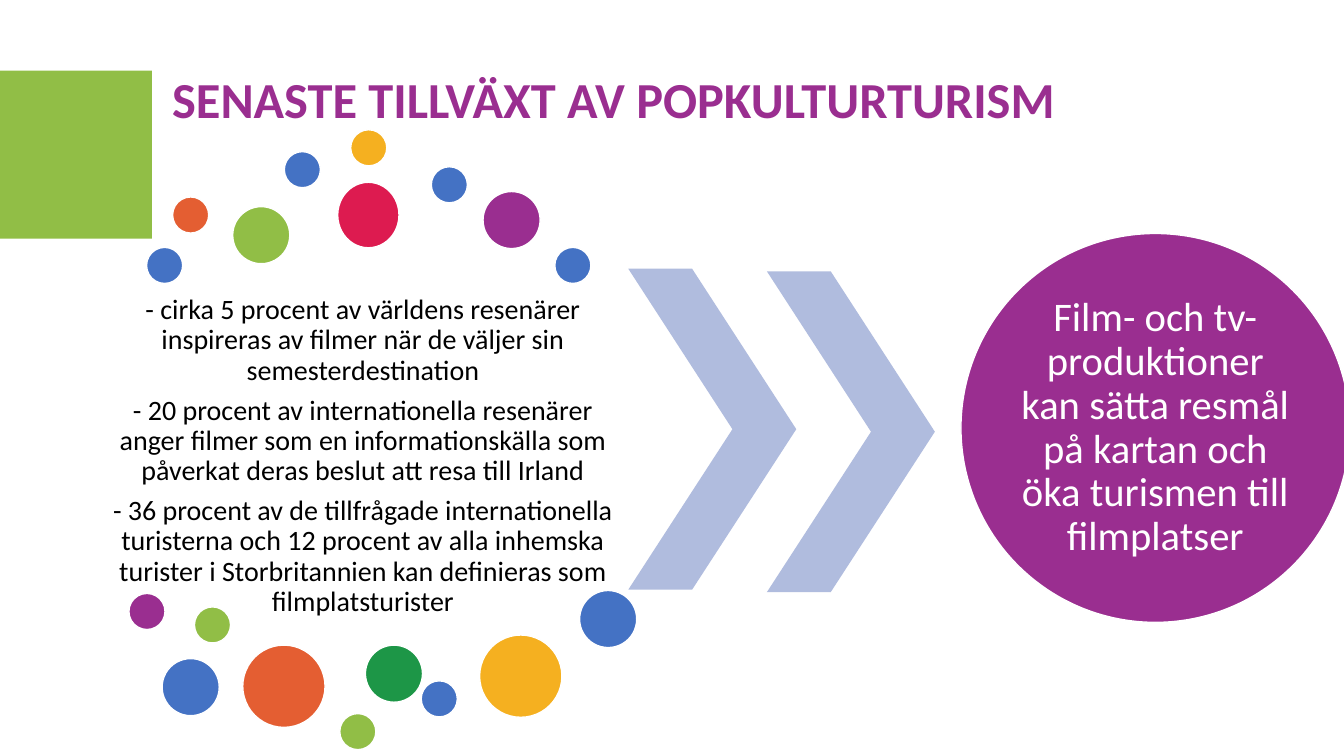
from typing import NamedTuple

from pptx import Presentation
from pptx.dml.color import RGBColor
from pptx.enum.shapes import MSO_SHAPE
from pptx.enum.text import MSO_ANCHOR, MSO_AUTO_SIZE, PP_ALIGN
from pptx.util import Inches, Pt

RECT, OVAL, CHEVRON = MSO_SHAPE.RECTANGLE, MSO_SHAPE.OVAL, MSO_SHAPE.CHEVRON
TOP, MIDDLE = MSO_ANCHOR.TOP, MSO_ANCHOR.MIDDLE
LEFT, CENTER = PP_ALIGN.LEFT, PP_ALIGN.CENTER
FIXED = MSO_AUTO_SIZE.NONE

BLACK = RGBColor(0x00, 0x00, 0x00)
WHITE = RGBColor(0xFF, 0xFF, 0xFF)
LIME = RGBColor(0x91, 0xBE, 0x46)
GREEN = RGBColor(0x1D, 0x96, 0x47)
BLUE = RGBColor(0x44, 0x72, 0xC4)
PALE = RGBColor(0xB0, 0xBC, 0xDE)
ORANGE = RGBColor(0xE4, 0x5E, 0x32)
YELLOW = RGBColor(0xF5, 0xB0, 0x20)
RED = RGBColor(0xDD, 0x1B, 0x50)
PURPLE = RGBColor(0x9A, 0x2E, 0x90)

FONT = "Calibri"
COLS, ROWS = 160, 90
SMALL, MEDIUM, LARGE = 4.3, 6.8, 9.8


class Box(NamedTuple):
    """Left, top, width and height in grid columns and rows."""
    x: float
    y: float
    w: float
    h: float


class Dot(NamedTuple):
    """A circle by its centre and diameter."""
    x: float
    y: float
    size: float
    fill: RGBColor


DOTS = [
    # Arc above the facts
    Dot(19.6, 31.6, SMALL, BLUE),
    Dot(22.7, 25.6, SMALL, ORANGE),
    Dot(31.1, 28, MEDIUM, LIME),
    Dot(36, 20.2, SMALL, BLUE),
    Dot(43.9, 17.6, SMALL, YELLOW),
    Dot(53.5, 22, SMALL, BLUE),
    Dot(60.9, 26.2, MEDIUM, PURPLE),
    Dot(68.2, 31.6, SMALL, BLUE),
    # Arc below the facts
    Dot(25.3, 74.4, SMALL, LIME),
    Dot(17.5, 72.8, SMALL, PURPLE),
    Dot(22.7, 81.8, MEDIUM, BLUE),
    Dot(33.8, 81.7, LARGE, ORANGE),
    Dot(42.6, 87.1, SMALL, LIME),
    Dot(46.9, 80.2, MEDIUM, GREEN),
    Dot(52.3, 83.2, SMALL, BLUE),
    Dot(62, 80.5, LARGE, YELLOW),
    Dot(72.4, 73.7, MEDIUM, BLUE),
]
ARROWS = [Box(74.8, 32, 20, 38.2), Box(91.3, 32.3, 20, 38.2)]

TITLE = "SENASTE TILLVÄXT AV POPKULTURTURISM"
FACTS = [
    "- cirka 5 procent av världens resenärer inspireras av filmer "
    "när de väljer sin semesterdestination",
    "- 20 procent av internationella resenärer anger filmer som en "
    "informationskälla som påverkat deras beslut att resa till Irland",
    "- 36 procent av de tillfrågade internationella turisterna och "
    "12 procent av alla inhemska turister i Storbritannien kan "
    "definieras som filmplatsturister",
]
RESULT = ("Film- och tv-produktioner kan sätta resmål på kartan "
          "och öka turismen till filmplatser")

deck = Presentation()
deck.slide_width, deck.slide_height = Inches(13.33), Inches(7.5)
slide = deck.slides.add_slide(deck.slide_layouts[5])


def place(box: Box) -> tuple[int, int, int, int]:
    col, row = deck.slide_width / COLS, deck.slide_height / ROWS
    return (round(box.x * col), round(box.y * row),
            round(box.w * col), round(box.h * row))


def draw(kind: MSO_SHAPE, box: Box, fill: RGBColor, edge: bool = False):
    shape = slide.shapes.add_shape(kind, *place(box))
    shape.shadow.inherit = False
    shape.fill.solid()
    shape.fill.fore_color.rgb = fill
    if edge:
        shape.line.color.rgb = WHITE
        shape.line.width = Pt(1)
    else:
        shape.line.fill.background()
    return shape


def write(shape, lines: list[str], *, size: float, color: RGBColor,
          bold: bool = False, align: PP_ALIGN = CENTER,
          anchor: MSO_ANCHOR = MIDDLE, inset: float = 0, after: float = 0):
    frame = shape.text_frame
    frame.word_wrap = True
    frame.auto_size = FIXED
    frame.vertical_anchor = anchor
    frame.margin_left = frame.margin_right = Inches(inset)
    frame.margin_top = frame.margin_bottom = Inches(inset / 2)
    frame.text = "\n".join(lines)
    for para in frame.paragraphs:
        para.alignment = align
        para.line_spacing = 0.9
        para.space_after = Pt(after)
        font = para.font
        font.name, font.size, font.bold = FONT, Pt(size), bold
        font.color.rgb = color


# Corner block and title
draw(RECT, Box(0, 8.4, 18.1, 20), LIME)
title = slide.shapes.title
title.left, title.top, title.width, title.height = place(
    Box(19.3, 8.3, 126.6, 9.1))
write(title, [TITLE], size=36, color=PURPLE, bold=True, align=LEFT,
      anchor=TOP, inset=0.1)

# Facts
facts = slide.shapes.add_textbox(*place(Box(11.4, 45, 63.6, 18.7)))
write(facts, FACTS, size=20, color=BLACK, inset=0.03, after=7)

# Coloured dots, the red one slightly tall
for dot in DOTS:
    half = dot.size / 2
    draw(OVAL, Box(dot.x - half, dot.y - half, dot.size, dot.size),
         dot.fill, edge=True)
draw(OVAL, Box(40.2, 21.7, 7.3, 7.8), RED, edge=True)

# Arrows towards the result
for box in ARROWS:
    draw(CHEVRON, box, PALE).adjustments[0] = 0.62

# Result
result = draw(OVAL, Box(114.4, 27.8, 46.3, 46.3), PURPLE, edge=True)
write(result, [RESULT], size=29, color=WHITE)

deck.save("out.pptx")
